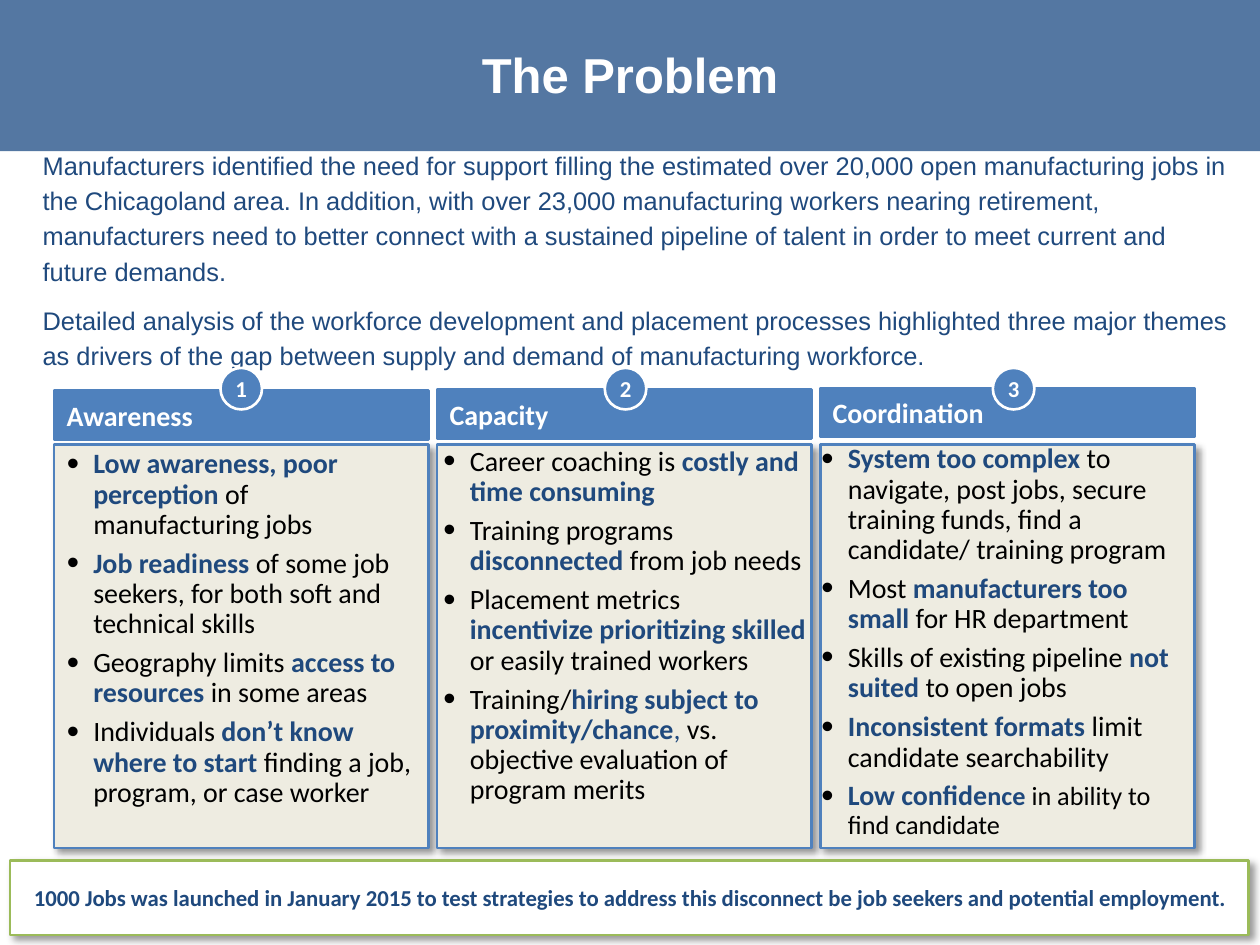
from lxml.etree import SubElement
from pptx import Presentation
from pptx.dml.color import RGBColor
from pptx.enum.shapes import MSO_SHAPE
from pptx.enum.text import MSO_ANCHOR, PP_ALIGN
from pptx.oxml.ns import qn
from pptx.util import Inches, Pt

NAVY, BLUE, CREAM, WHITE, BLACK = "1F497D", "4F81BD", "EEECE1", "FFFFFF", "000000"
GREEN, BANNER = "9BBB59", "376092"
KEY = {"color": NAVY, "bold": True}
PLAIN = {"color": BLACK}

TITLE = "The Problem"
INTRO = [
    "Manufacturers identified the need for support filling the estimated over 20,000 open manufacturing jobs in the Chicagoland area. In addition, with over 23,000 manufacturing workers nearing retirement, manufacturers need to better connect with a sustained pipeline of talent in order to meet current and future demands.",
    "Detailed analysis of the workforce development and placement processes highlighted three major themes as drivers of the gap between supply and demand of manufacturing workforce.",
]
THEMES = [
    {"name": "Awareness", "badge_left": 1.75, "list_left": 0.52, "list_width": 2.78, "points": [
        [("Low awareness, poor perception ", KEY), ("of manufacturing jobs", PLAIN)],
        [("Job readiness ", KEY), ("of some job seekers, for both soft and technical skills", PLAIN)],
        [("Geography limits ", PLAIN), ("access to resources ", KEY), ("in some areas", PLAIN)],
        [("Individuals ", PLAIN), ("don’t know where to start ", KEY),
         ("finding a job, program, or case worker", PLAIN)],
    ]},
    {"name": "Capacity", "badge_left": 4.8, "list_left": 3.51, "list_width": 2.9, "points": [
        [("Career coaching is ", PLAIN), ("costly and time consuming", KEY)],
        [("Training programs ", PLAIN), ("disconnected ", KEY), ("from job needs", PLAIN)],
        [("Placement metrics ", PLAIN), ("incentivize prioritizing skilled ", KEY),
         ("or easily trained workers", PLAIN)],
        [("Training/", PLAIN), ("hiring subject to proximity/chance", KEY), (",", {"color": NAVY}),
         (" vs. objective evaluation of program merits", PLAIN)],
    ]},
    {"name": "Coordination", "badge_left": 7.88, "list_left": 6.51, "list_width": 2.93, "points": [
        [("System too complex ", KEY),
         ("to navigate, post jobs, secure training funds, find a candidate/ training program", PLAIN)],
        [("Most ", PLAIN), ("manufacturers too small ", KEY), ("for HR department", PLAIN)],
        [("Skills of existing pipeline ", PLAIN), ("not suited ", KEY), ("to open jobs", PLAIN)],
        [("Inconsistent formats ", KEY), ("limit candidate searchability", PLAIN)],
        [("Low confide", KEY), ("nce ", KEY | {"size": 15}),
         ("in ability to find candidate", PLAIN | {"size": 15})],
    ]},
]
LAUNCH = "1000 Jobs was launched in January 2015 to test strategies to address this disconnect be job seekers and potential employment."

COLUMN_LEFT, COLUMN_PITCH, COLUMN_WIDTH = 0.43, 3.04, 2.97
HEADER_TOP, HEADER_HEIGHT = 3.1, 0.39
PANEL_TOP, PANEL_HEIGHT = 3.53, 3.2
BADGE_TOP, BADGE_SIZE = 2.92, 0.33
LIST_TOP, LIST_HEIGHT = 3.57, 2.91


def rgb(value):
    return RGBColor.from_string(value)


def style(font, size, color, bold=False, name="Calibri"):
    font.size, font.bold, font.name = Pt(size), bold, name
    font.color.rgb = rgb(color)


def inches(*lengths):
    return [Inches(length) for length in lengths]


def add_block(slide, box, fill, line=None, kind=MSO_SHAPE.RECTANGLE):
    block = slide.shapes.add_shape(kind, *inches(*box))
    block.shadow.inherit = False
    block.fill.solid()
    block.fill.fore_color.rgb = rgb(fill)
    if line:
        block.line.color.rgb = rgb(line)
        block.line.width = Pt(1.5)
    else:
        block.line.fill.background()
    return block


def add_shadow(block):
    effects = block.element.spPr.find(qn("a:effectLst"))
    shadow = SubElement(effects, qn("a:outerShdw"), blurRad=str(Pt(4)), dist=str(Pt(3)),
                        dir="2700000", algn="tl", rotWithShape="0")
    color = SubElement(shadow, qn("a:srgbClr"), val=BLACK)
    SubElement(color, qn("a:alpha"), val="40000")


def label(block, text, size, color, align):
    frame = block.text_frame
    frame.text = text
    frame.word_wrap = True
    frame.vertical_anchor = MSO_ANCHOR.MIDDLE
    frame.paragraphs[0].alignment = align
    style(frame.paragraphs[0].runs[0].font, size, color, True)


def clear_margins(frame):
    frame.margin_left = frame.margin_right = frame.margin_top = frame.margin_bottom = 0


def add_bullet(paragraph):
    properties = paragraph._p.get_or_add_pPr()
    properties.set("marL", str(Inches(0.22)))
    properties.set("indent", str(Inches(-0.21)))
    color = SubElement(properties, qn("a:buClr"))
    SubElement(color, qn("a:srgbClr"), val=BLACK)
    SubElement(properties, qn("a:buSzPct"), val="125000")
    SubElement(properties, qn("a:buFont"), typeface="Arial")
    SubElement(properties, qn("a:buChar"), char="•")


def add_points(slide, box, points):
    frame = slide.shapes.add_textbox(*inches(*box)).text_frame
    frame.word_wrap = True
    clear_margins(frame)
    for row, pieces in enumerate(points):
        paragraph = frame.paragraphs[0] if row == 0 else frame.add_paragraph()
        paragraph.level = 1
        add_bullet(paragraph)
        paragraph.line_spacing = 0.9
        paragraph.space_before = Pt(5 if row else 0)
        for text, look in pieces:
            run = paragraph.add_run()
            run.text = text
            style(run.font, **({"size": 16} | look))


def add_heading(slide):
    banner = add_block(slide, (0, 0, 10, 1.2), BANNER)
    tint = banner.element.spPr.find(qn("a:solidFill")).find(qn("a:srgbClr"))
    SubElement(tint, qn("a:alpha"), val="85000")
    title = slide.shapes.title
    title.element.addprevious(banner.element)
    title.left, title.top, title.width, title.height = inches(0, 0, 10, 1.17)
    label(title, TITLE, 28, WHITE, PP_ALIGN.CENTER)
    title.text_frame.paragraphs[0].runs[0].font.name = "Arial"


def add_intro(slide):
    frame = slide.shapes.add_textbox(*inches(0.24, 1.11, 9.67, 1.83)).text_frame
    frame.word_wrap = True
    for row, text in enumerate(INTRO):
        paragraph = frame.paragraphs[0] if row == 0 else frame.add_paragraph()
        paragraph.text = text
        paragraph.line_spacing = 1.15
        paragraph.space_before = Pt(4 if row else 0)
        paragraph.space_after = Pt(4)
        style(paragraph.runs[0].font, 14.5, NAVY, name="Arial")


def add_themes(slide):
    lefts = [COLUMN_LEFT + column * COLUMN_PITCH for column in range(len(THEMES))]
    for left in lefts:
        add_shadow(add_block(slide, (left, PANEL_TOP, COLUMN_WIDTH, PANEL_HEIGHT), CREAM, BLUE))
    for column, (left, theme) in enumerate(zip(lefts, THEMES)):
        header = add_block(slide, (left, HEADER_TOP - 0.01 * column, COLUMN_WIDTH, HEADER_HEIGHT), BLUE, BLUE)
        label(header, theme["name"], 16, WHITE, PP_ALIGN.LEFT)
        badge = add_block(slide, (theme["badge_left"], BADGE_TOP, BADGE_SIZE, BADGE_SIZE),
                          BLUE, WHITE, MSO_SHAPE.OVAL)
        clear_margins(badge.text_frame)
        label(badge, str(column + 1), 13, WHITE, PP_ALIGN.CENTER)
        list_box = (theme["list_left"], LIST_TOP - 0.02 * column, theme["list_width"], LIST_HEIGHT)
        add_points(slide, list_box, theme["points"])


def main():
    deck = Presentation()
    deck.slide_width, deck.slide_height = inches(10, 7.5)
    slide = deck.slides.add_slide(deck.slide_layouts[5])
    add_heading(slide)
    add_intro(slide)
    add_themes(slide)
    launch = add_block(slide, (0.08, 6.83, 9.83, 0.59), WHITE, GREEN)
    add_shadow(launch)
    label(launch, LAUNCH, 13, NAVY, PP_ALIGN.CENTER)
    deck.save("out.pptx")


if __name__ == "__main__":
    main()
